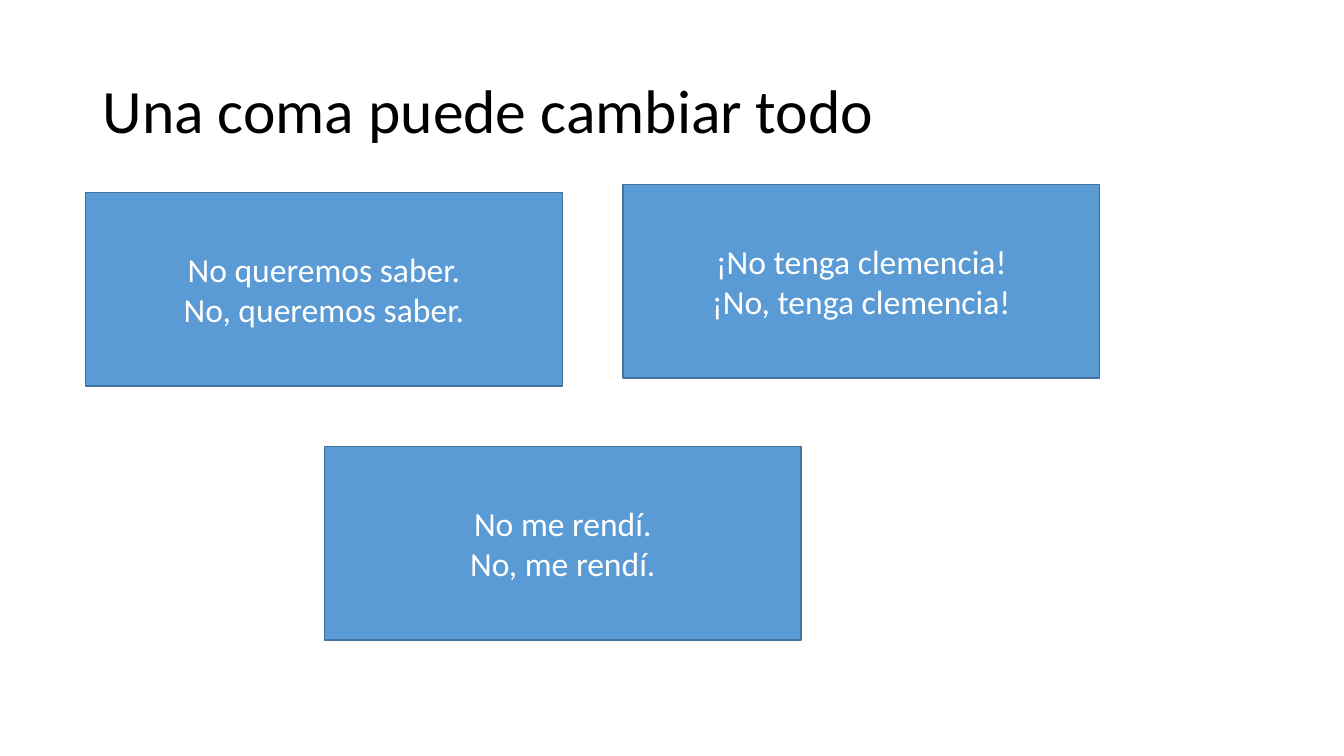
"""Build a slide showing how one comma changes the meaning of a sentence."""
from pptx import Presentation
from pptx.dml.color import RGBColor
from pptx.enum.shapes import MSO_SHAPE
from pptx.enum.text import MSO_ANCHOR, PP_ALIGN
from pptx.util import Cm, Pt

TITLE = "Una coma puede cambiar todo"
CARDS = [
    (2.16, 4.85, ["No queremos saber.", "No, queremos saber."]),
    (15.7, 4.65, ["¡No tenga clemencia!", "¡No, tenga clemencia!"]),
    (8.18, 11.25, ["No me rendí.", "No, me rendí."]),
]
CARD_W, CARD_H = Cm(12.01), Cm(4.88)

BLACK = RGBColor(0x00, 0x00, 0x00)
WHITE = RGBColor(0xFF, 0xFF, 0xFF)
BLUE = RGBColor(0x5B, 0x9B, 0xD5)
DARK_BLUE = RGBColor(0x43, 0x73, 0x9E)


def write(tf, lines, size, color, align=PP_ALIGN.LEFT, spacing=1.0):
    tf.word_wrap = True
    tf.vertical_anchor = MSO_ANCHOR.MIDDLE
    for i, line in enumerate(lines):
        p = tf.add_paragraph() if i else tf.paragraphs[0]
        p.alignment = align
        p.line_spacing = spacing
        r = p.add_run()
        r.text = line
        r.font.name = "Calibri"
        r.font.size = Pt(size)
        r.font.color.rgb = color


def main():
    prs = Presentation()
    prs.slide_width, prs.slide_height = Cm(33.87), Cm(19.05)
    s = prs.slides.add_slide(prs.slide_layouts[5])

    title = s.shapes.title
    title.left, title.top = Cm(2.33), Cm(1.01)
    title.width, title.height = Cm(29.21), Cm(3.68)
    write(title.text_frame, [TITLE], size=44, color=BLACK, spacing=0.9)

    for left, top, lines in CARDS:
        sp = s.shapes.add_shape(MSO_SHAPE.RECTANGLE, Cm(left), Cm(top), CARD_W, CARD_H)
        sp.shadow.inherit = False
        sp.fill.solid()
        sp.fill.fore_color.rgb = BLUE
        sp.line.color.rgb = DARK_BLUE
        sp.line.width = Pt(1)
        write(sp.text_frame, lines, size=24, color=WHITE, align=PP_ALIGN.CENTER)

    prs.save("out.pptx")


if __name__ == "__main__":
    main()
